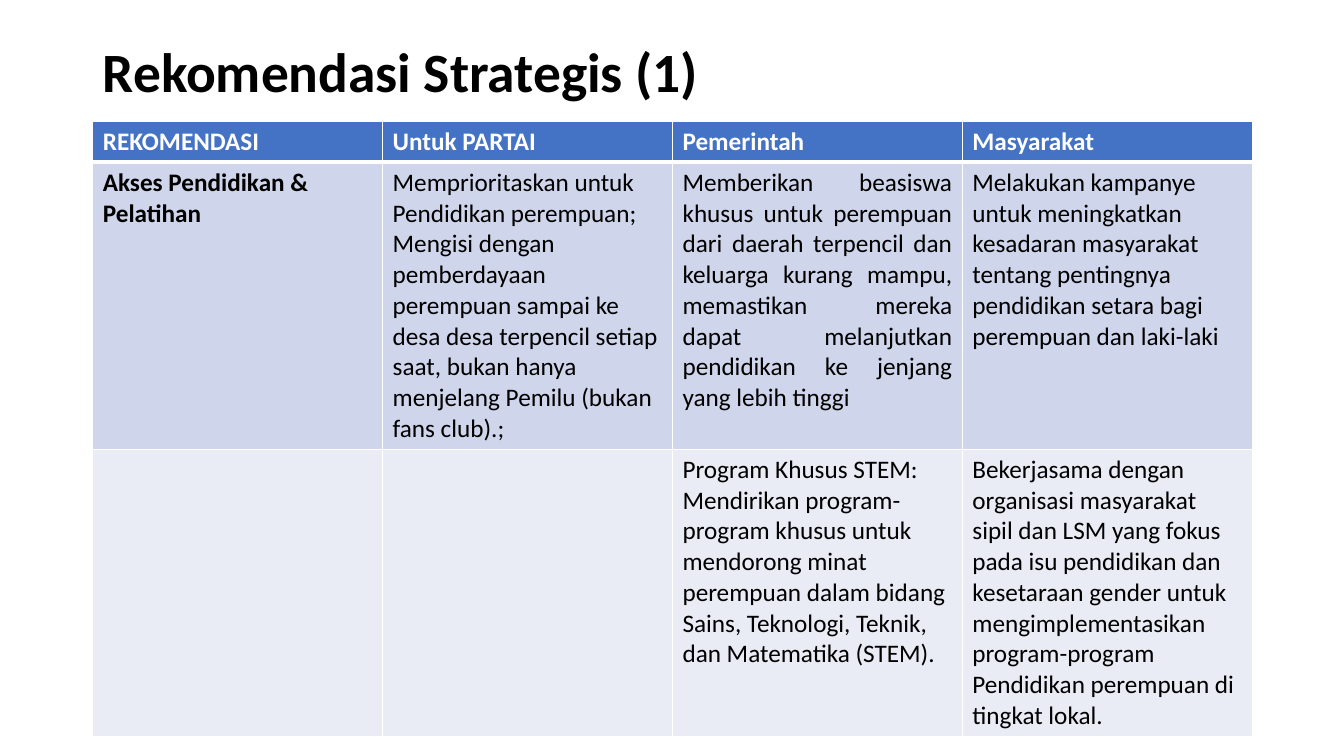
"""Build the strategic recommendations slide with its title and table."""
from dataclasses import dataclass

from lxml.etree import SubElement
from pptx import Presentation
from pptx.dml.color import RGBColor
from pptx.enum.text import MSO_ANCHOR, MSO_AUTO_SIZE, PP_ALIGN
from pptx.oxml.ns import qn
from pptx.util import Inches, Pt

TITLE = "Rekomendasi Strategis (1)"
HEADERS = ["REKOMENDASI", "Untuk PARTAI", "Pemerintah", "Masyarakat"]
RECOMMENDATIONS = [
    [
        "Akses Pendidikan & Pelatihan",
        "Memprioritaskan untuk Pendidikan perempuan;\n"
        "Mengisi dengan pemberdayaan perempuan sampai ke desa desa terpencil "
        "setiap saat, bukan hanya menjelang Pemilu (bukan fans club).;",
        "Memberikan beasiswa khusus untuk perempuan dari daerah terpencil dan "
        "keluarga kurang mampu, memastikan mereka dapat melanjutkan pendidikan "
        "ke jenjang yang lebih tinggi",
        "Melakukan kampanye untuk meningkatkan kesadaran masyarakat tentang "
        "pentingnya pendidikan setara bagi perempuan dan laki-laki",
    ],
    [
        "",
        "",
        "Program Khusus STEM: Mendirikan program-program khusus untuk mendorong "
        "minat perempuan dalam bidang Sains, Teknologi, Teknik, dan Matematika "
        "(STEM).",
        "Bekerjasama dengan organisasi masyarakat sipil dan LSM yang fokus pada "
        "isu pendidikan dan kesetaraan gender untuk mengimplementasikan "
        "program-program Pendidikan perempuan di tingkat lokal.",
    ],
]
JUSTIFIED_CELL = (1, 2)
LEFT, WIDTH = 0.92, 11.5
TITLE_TOP, TITLE_HEIGHT = 0.4, 0.67
TABLE_TOP, HEADER_HEIGHT, BODY_HEIGHT = 1.2, 0.41, 2.84


@dataclass(frozen=True)
class Theme:
    """Colours, font and sizes of the slide."""

    font: str = "Calibri"
    text: str = "000000"
    light: str = "FFFFFF"
    header: str = "4472C4"
    bands: tuple = ("CFD5EA", "E9EBF5")
    title_size: float = 39.6
    table_size: float = 18
    border: float = 1
    header_border: float = 3


THEME = Theme()


def set_attributes(target, values):
    """Set each named value on the target."""
    for name, value in values.items():
        setattr(target, name, value)


def format_font(paragraph, size, color, bold):
    """Apply the theme font to a paragraph's runs."""
    for run in paragraph.runs:
        set_attributes(run.font, {"name": THEME.font, "size": Pt(size), "bold": bold})
        run.font.color.rgb = RGBColor.from_string(color)


def add_border(cell, side, width):
    """Draw one light border on a cell."""
    line = SubElement(cell._tc.get_or_add_tcPr(), qn(f"a:ln{side}"), w=str(Pt(width)))
    SubElement(SubElement(line, qn("a:solidFill")), qn("a:srgbClr"), val=THEME.light)


def fill_cell(cell, text, row, column):
    """Write and format one table cell."""
    is_header = row == 0
    widths = dict.fromkeys("LRTB", THEME.border)
    if row < 2:
        widths["B" if is_header else "T"] = THEME.header_border
    for side, width in widths.items():
        add_border(cell, side, width)
    cell.fill.solid()
    color = THEME.header if is_header else THEME.bands[(row - 1) % 2]
    cell.fill.fore_color.rgb = RGBColor.from_string(color)
    cell.text = text
    for paragraph in cell.text_frame.paragraphs:
        if (row, column) == JUSTIFIED_CELL:
            paragraph.alignment = PP_ALIGN.JUSTIFY
        font_color = THEME.light if is_header else THEME.text
        format_font(paragraph, THEME.table_size, font_color, is_header or column == 0)


def add_title(slide):
    """Place and format the slide title."""
    title = slide.shapes.title
    set_attributes(title, {
        "left": Inches(LEFT), "top": Inches(TITLE_TOP),
        "width": Inches(WIDTH), "height": Inches(TITLE_HEIGHT),
    })
    frame = title.text_frame
    set_attributes(frame, {
        "text": TITLE, "word_wrap": True, "auto_size": MSO_AUTO_SIZE.NONE,
        "vertical_anchor": MSO_ANCHOR.MIDDLE,
    })
    paragraph = frame.paragraphs[0]
    set_attributes(paragraph, {"alignment": PP_ALIGN.LEFT, "line_spacing": 0.9})
    format_font(paragraph, THEME.title_size, THEME.text, True)


def add_recommendations(slide):
    """Add the table of recommendations."""
    rows = [HEADERS, *RECOMMENDATIONS]
    heights = [HEADER_HEIGHT] + [BODY_HEIGHT] * len(RECOMMENDATIONS)
    table = slide.shapes.add_table(
        len(rows), len(HEADERS), Inches(LEFT), Inches(TABLE_TOP),
        Inches(WIDTH), Inches(sum(heights)),
    ).table
    for row, (texts, height) in enumerate(zip(rows, heights)):
        table.rows[row].height = Inches(height)
        for column, text in enumerate(texts):
            fill_cell(table.cell(row, column), text, row, column)


def main():
    """Create and save the presentation."""
    presentation = Presentation()
    set_attributes(presentation, {
        "slide_width": Inches(13.33), "slide_height": Inches(7.5),
    })
    slide = presentation.slides.add_slide(presentation.slide_layouts[5])
    add_title(slide)
    add_recommendations(slide)
    presentation.save("out.pptx")


if __name__ == "__main__":
    main()
